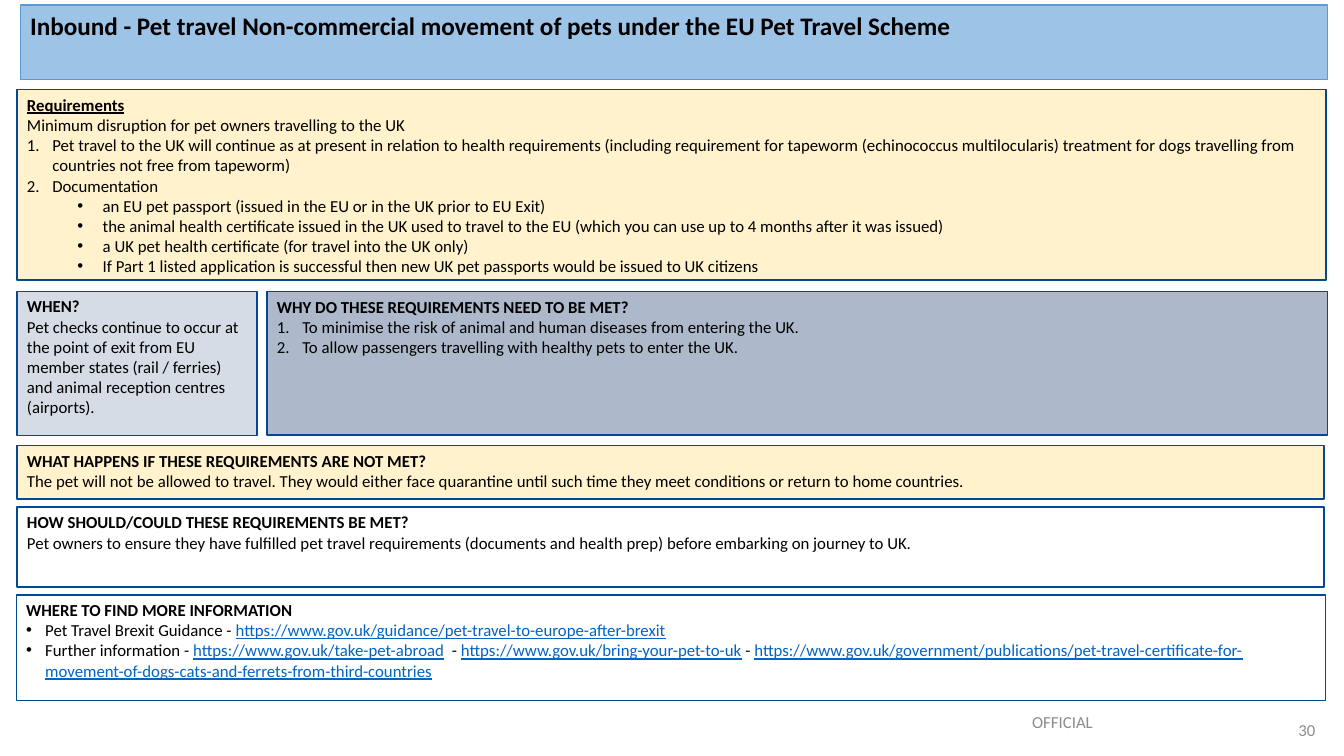
from lxml.etree import SubElement
from pptx import Presentation
from pptx.dml.color import RGBColor
from pptx.enum.shapes import MSO_SHAPE as Shape
from pptx.enum.text import MSO_ANCHOR as Anchor, PP_ALIGN as Align
from pptx.oxml.ns import qn
from pptx.util import Cm, Pt

BLACK = RGBColor(0x00, 0x00, 0x00)
WHITE = RGBColor(0xFF, 0xFF, 0xFF)
GREY = RGBColor(0x8C, 0x8C, 0x8C)
LINK_BLUE = RGBColor(0x05, 0x63, 0xC1)
NAVY = RGBColor(0x04, 0x48, 0x94)
SKY = RGBColor(0x9D, 0xC3, 0xE6)
SKY_EDGE = RGBColor(0x5B, 0x9B, 0xD5)
CREAM = RGBColor(0xFF, 0xF2, 0xCC)
PALE_SLATE = RGBColor(0xD6, 0xDC, 0xE5)
SLATE = RGBColor(0xAD, 0xB9, 0xCA)

HEADING = dict(bold=True)
UNDERLINED = dict(bold=True, underline=True)
BODY = dict()
NUMBERED = dict(marker="1.", indent=0.64, hanging=0.64)
BULLET = dict(marker="•", indent=0.48, hanging=0.48)
SUB_BULLET = dict(marker="•", indent=1.91, hanging=0.64, level=1)


def write(paragraph, text, size=12, bold=False, underline=False, color=BLACK,
          align=Align.LEFT, marker=None, indent=0, hanging=0, level=0):
    paragraph.alignment = align
    paragraph.level = level
    for part in text.split("|"):
        is_link = part.startswith("https://")
        run = paragraph.add_run()
        run.text = part
        run.font.name = "Calibri"
        run.font.size = Pt(size)
        run.font.bold = bold
        run.font.underline = underline or is_link
        run.font.color.rgb = LINK_BLUE if is_link else color
    if marker:
        properties = paragraph._p.get_or_add_pPr()
        properties.set("marL", str(Cm(indent)))
        properties.set("indent", str(-Cm(hanging)))
        if marker == "1.":
            SubElement(properties, qn("a:buFont"), typeface="+mj-lt")
            SubElement(properties, qn("a:buAutoNum"), type="arabicPeriod")
        else:
            SubElement(properties, qn("a:buFont"), typeface="Arial")
            SubElement(properties, qn("a:buChar"), char=marker)


deck = Presentation()
deck.slide_width, deck.slide_height = Cm(33.87), Cm(19.05)
slide = deck.slides.add_slide(deck.slide_layouts[6])

panels = [
    ((0.51, 0.13, 32.94, 1.88), SKY, SKY_EDGE, [
        ("Inbound - Pet travel Non-commercial movement of pets under the EU Pet Travel Scheme",
         dict(size=18, bold=True)),
    ]),
    ((0.43, 2.26, 32.99, 4.8), CREAM, NAVY, [
        ("Requirements", UNDERLINED),
        ("Minimum disruption for pet owners travelling to the UK", BODY),
        ("Pet travel to the UK will continue as at present in relation to health requirements "
         "(including requirement for tapeworm (echinococcus multilocularis) treatment for dogs "
         "travelling from countries not free from tapeworm)", NUMBERED),
        ("Documentation", NUMBERED),
        ("an EU pet passport (issued in the EU or in the UK prior to EU Exit)", SUB_BULLET),
        ("the animal health certificate issued in the UK used to travel to the EU "
         "(which you can use up to 4 months after it was issued)", SUB_BULLET),
        ("a UK pet health certificate (for travel into the UK only)", SUB_BULLET),
        ("If Part 1 listed application is successful then new UK pet passports "
         "would be issued to UK citizens", SUB_BULLET),
    ]),
    ((0.43, 7.34, 6.05, 3.63), PALE_SLATE, NAVY, [
        ("WHEN?", HEADING),
        ("Pet checks continue to occur at the point of exit from EU member states "
         "(rail / ferries) and animal reception centres (airports).", BODY),
    ]),
    ((6.73, 7.35, 26.72, 3.61), SLATE, NAVY, [
        ("WHY DO THESE REQUIREMENTS NEED TO BE MET?", HEADING),
        ("To minimise the risk of animal and human diseases from entering the UK.", NUMBERED),
        ("To allow passengers travelling with healthy pets to enter the UK.", NUMBERED),
    ]),
    ((0.43, 11.23, 32.94, 1.35), CREAM, NAVY, [
        ("WHAT HAPPENS IF THESE REQUIREMENTS ARE NOT MET?", HEADING),
        ("The pet will not be allowed to travel. They would either face quarantine until "
         "such time they meet conditions or return to home countries.", BODY),
    ]),
    ((0.43, 12.78, 32.94, 2.01), WHITE, NAVY, [
        ("HOW SHOULD/COULD THESE REQUIREMENTS BE MET?", HEADING),
        ("Pet owners to ensure they have fulfilled pet travel requirements "
         "(documents and health prep) before embarking on journey to UK.", BODY),
    ]),
    ((0.41, 14.99, 32.99, 2.67), WHITE, NAVY, [
        ("WHERE TO FIND MORE INFORMATION", HEADING),
        ("Pet Travel Brexit Guidance - |"
         "https://www.gov.uk/guidance/pet-travel-to-europe-after-brexit", BULLET),
        ("Further information - |https://www.gov.uk/take-pet-abroad|  - |"
         "https://www.gov.uk/bring-your-pet-to-uk| - |"
         "https://www.gov.uk/government/publications/pet-travel-certificate-for-"
         "movement-of-dogs-cats-and-ferrets-from-third-countries", BULLET),
    ]),
]

for place, fill, edge, lines in panels:
    panel = slide.shapes.add_shape(Shape.RECTANGLE, *map(Cm, place))
    panel.shadow.inherit = False
    panel.fill.solid()
    panel.fill.fore_color.rgb = fill
    panel.line.color.rgb = edge
    panel.line.width = Pt(1)
    content = panel.text_frame
    content.word_wrap = True
    content.vertical_anchor = Anchor.TOP
    for number, (text, style) in enumerate(lines):
        paragraph = content.add_paragraph() if number else content.paragraphs[0]
        write(paragraph, text, **style)

footers = [
    ((21.11, 17.68, 11.43, 1.02), "OFFICIAL ", Align.CENTER),
    ((32.41, 17.88, 0.99, 1.02), "30", Align.RIGHT),
]

for place, text, align in footers:
    footer = slide.shapes.add_textbox(*map(Cm, place)).text_frame
    footer.word_wrap = True
    footer.vertical_anchor = Anchor.MIDDLE
    write(footer.paragraphs[0], text, color=GREY, align=align)

deck.save("out.pptx")
